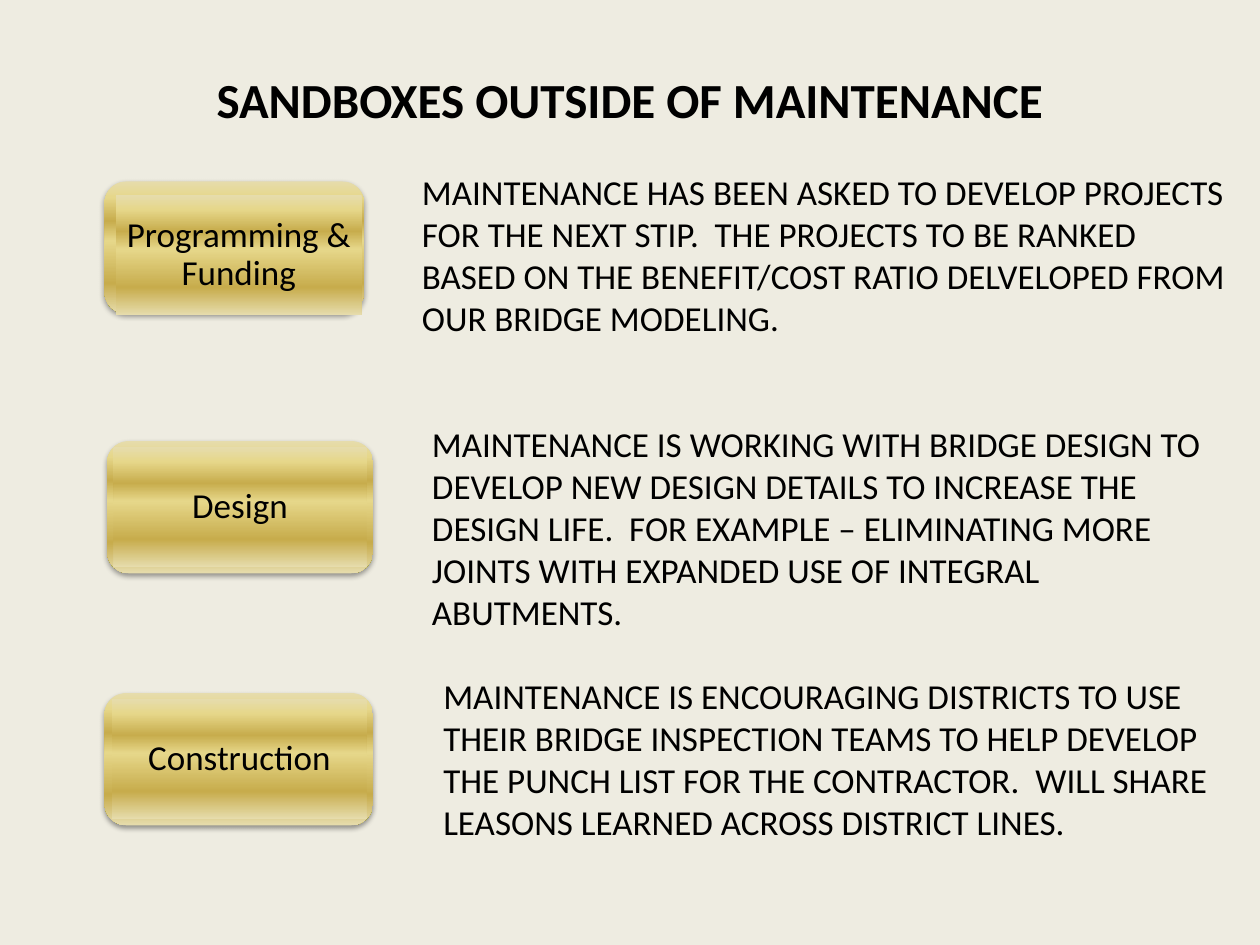
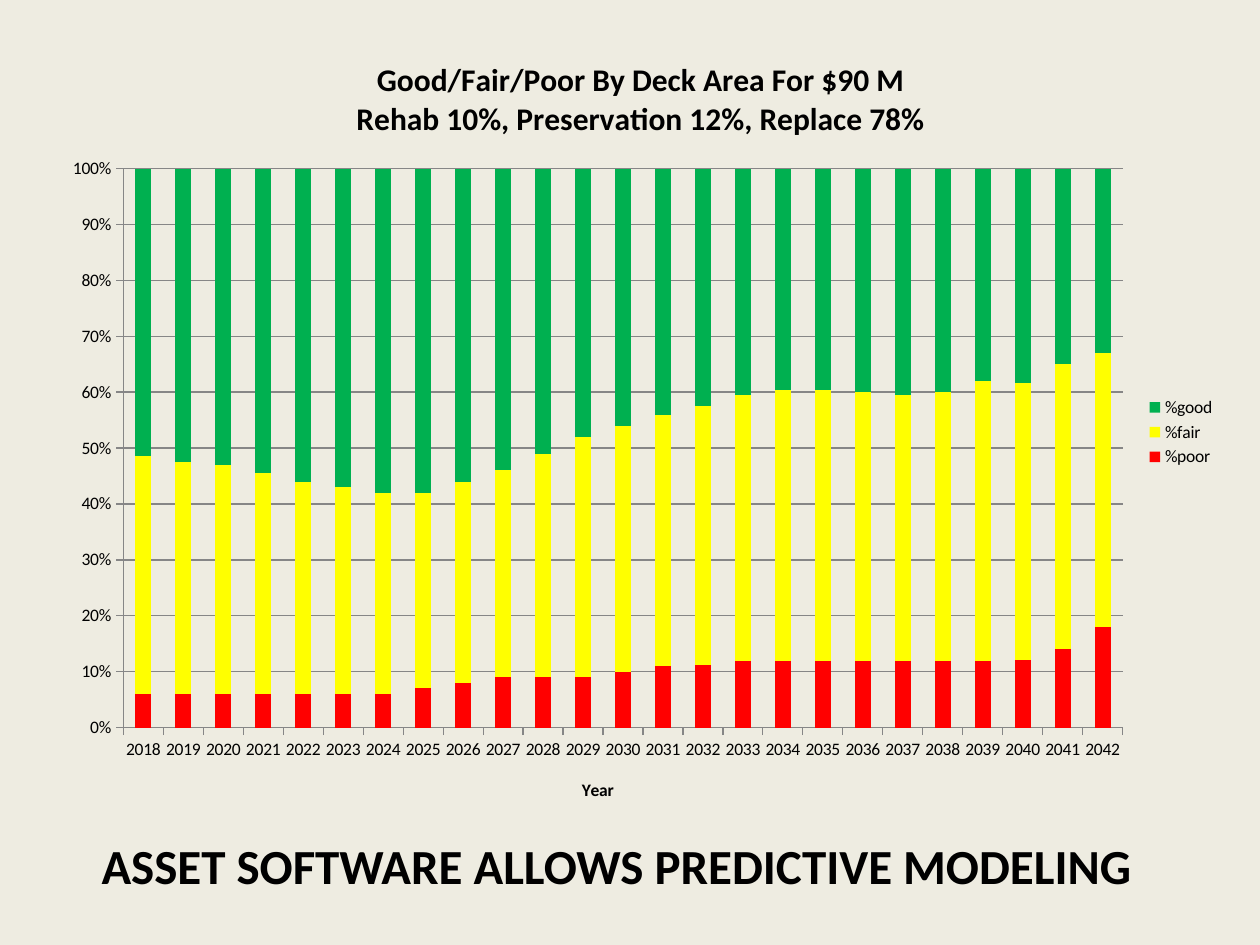
from dataclasses import dataclass

from lxml.etree import SubElement
from pptx import Presentation
from pptx.chart.data import CategoryChartData
from pptx.dml.color import RGBColor
from pptx.enum.chart import XL_CHART_TYPE, XL_LEGEND_POSITION, XL_TICK_MARK
from pptx.enum.shapes import MSO_SHAPE
from pptx.enum.text import MSO_ANCHOR, MSO_AUTO_SIZE, PP_ALIGN
from pptx.oxml import parse_xml
from pptx.oxml.ns import nsdecls, qn
from pptx.util import Inches, Pt


@dataclass(frozen=True)
class Theme:
    font: str = "Calibri"
    ground: str = "EEECE1"
    ink: str = "000000"
    rule: str = "868686"
    poor: str = "FF0000"
    fair: str = "FFFF00"
    good: str = "00B050"
    gold: tuple = ((0, "E6DCAC"), (12, "E6D78A"), (30, "C7AC4C"),
                   (45, "E6D78A"), (77, "C7AC4C"), (100, "E6DCAC"))
    head: int = 28
    body: int = 20
    sub: int = 18
    small: int = 10


THEME = Theme()

# Label, card box, inner box, text box, text
TOPICS = [
    ("Programming & Funding", (0.83, 1.44, 2.06, 1.05), (0.92, 1.55, 1.95, 0.95),
     (3.25, 1.3, 6.58, 1.45),
     "MAINTENANCE HAS BEEN ASKED TO DEVELOP PROJECTS FOR THE NEXT STIP.  "
     "THE PROJECTS TO BE RANKED BASED ON THE BENEFIT/COST RATIO DELVELOPED "
     "FROM OUR BRIDGE MODELING."),
    ("Design", (0.85, 3.5, 2.11, 1.05), (0.9, 3.55, 2.01, 0.95),
     (3.33, 3.3, 6.42, 1.78),
     "MAINTENANCE IS WORKING WITH BRIDGE DESIGN TO DEVELOP NEW DESIGN DETAILS "
     "TO INCREASE THE DESIGN LIFE.  FOR EXAMPLE – ELIMINATING MORE JOINTS "
     "WITH EXPANDED USE OF INTEGRAL ABUTMENTS."),
    ("Construction", (0.83, 5.5, 2.13, 1.05), (0.89, 5.55, 2.02, 0.95),
     (3.42, 5.3, 6.33, 1.45),
     "MAINTENANCE IS ENCOURAGING DISTRICTS TO USE THEIR BRIDGE INSPECTION "
     "TEAMS TO HELP DEVELOP THE PUNCH LIST FOR THE CONTRACTOR.  WILL SHARE "
     "LEASONS LEARNED ACROSS DISTRICT LINES."),
]

YEARS = [str(year) for year in range(2018, 2043)]
SHARES = [
    ("%poor", THEME.poor, [6, 6, 6, 6, 6, 6, 6, 7, 8, 9, 9, 9, 10, 11, 11, 12,
                           12, 12, 12, 12, 12, 12, 12, 14, 18]),
    ("%fair", THEME.fair, [42, 42, 41, 40, 38, 37, 36, 35, 36, 37, 40, 43, 44,
                           45, 46, 48, 49, 49, 48, 48, 48, 50, 49, 51, 49]),
    ("%good", THEME.good, [51, 53, 53, 55, 56, 57, 58, 58, 56, 54, 51, 48, 46,
                           44, 42, 41, 40, 40, 40, 41, 40, 38, 38, 35, 33]),
]


def color(code):
    return RGBColor.from_string(code)


def inches(box):
    return [Inches(size) for size in box]


def style(font, size, bold=False):
    font.name, font.size, font.bold = THEME.font, Pt(size), bold
    font.color.rgb = color(THEME.ink)


def write(frame, text, size=THEME.body, bold=False, align=None,
          spacing=None, after=None):
    """Fill a text frame, one paragraph for each line of text."""
    frame.text = text
    for para in frame.paragraphs:
        para.alignment, para.line_spacing = align, spacing
        para.space_after = after
        for run in para.runs:
            style(run.font, size, bold)


def add_text(slide, box, text, **form):
    frame = slide.shapes.add_textbox(*inches(box)).text_frame
    frame.word_wrap = True
    frame.auto_size = MSO_AUTO_SIZE.SHAPE_TO_FIT_TEXT
    write(frame, text, **form)


def add_title(slide, box, text):
    add_text(slide, box, text, size=THEME.head, bold=True,
             align=PP_ALIGN.CENTER)


def add_gold(group, kind, box):
    """Add a borderless shape with the gold gradient."""
    shape = group.shapes.add_shape(kind, *inches(box))
    shape.shadow.inherit = False
    shape.line.fill.background()
    shape.fill.gradient()
    shape.fill.gradient_angle = 270
    stops = shape.element.spPr.find(".//" + qn("a:gsLst"))
    for stop in list(stops):
        stops.remove(stop)
    for place, code in THEME.gold:
        stop = SubElement(stops, qn("a:gs"), pos=str(place * 1000))
        SubElement(stop, qn("a:srgbClr"), val=code)
    return shape


def cast_shadow(shape):
    effects = shape.element.spPr.find(qn("a:effectLst"))
    shadow = SubElement(effects, qn("a:outerShdw"), blurRad="40000",
                        dist="20000", dir="5400000", rotWithShape="0")
    tint = SubElement(shadow, qn("a:srgbClr"), val=THEME.ink)
    SubElement(tint, qn("a:alpha"), val="38000")


def add_card(slide, label, box, inner):
    group = slide.shapes.add_group_shape()
    cast_shadow(add_gold(group, MSO_SHAPE.ROUNDED_RECTANGLE, box))
    frame = add_gold(group, MSO_SHAPE.RECTANGLE, inner).text_frame
    frame.word_wrap = True
    frame.vertical_anchor = MSO_ANCHOR.MIDDLE
    frame.margin_left = frame.margin_right = Inches(0.08)
    frame.margin_top = frame.margin_bottom = Inches(0.08)
    write(frame, label, align=PP_ALIGN.CENTER, spacing=0.9, after=Pt(7))


def place_plot(chart, **sides):
    """Fix the inner plot area, as fractions of the chart."""
    area = chart.element.find(".//" + qn("c:plotArea"))
    for old in area.findall(qn("c:layout")):
        area.remove(old)
    layout = parse_xml(
        f'<c:layout {nsdecls("c")}><c:manualLayout>'
        '<c:layoutTarget val="inner"/><c:xMode val="edge"/>'
        '<c:yMode val="edge"/></c:manualLayout></c:layout>')
    for side, size in sides.items():
        SubElement(layout[0], qn(f"c:{side}"), val=str(size))
    area.insert(0, layout)


def add_chart(slide, box, title):
    data = CategoryChartData()
    data.categories = YEARS
    for name, _, shares in SHARES:
        data.add_series(name, shares)
    chart = slide.shapes.add_chart(
        XL_CHART_TYPE.COLUMN_STACKED_100, *inches(box), data).chart
    style(chart.font, THEME.small)
    chart.has_title = True
    write(chart.chart_title.text_frame, title, size=THEME.sub, bold=True)

    plot = chart.plots[0]
    plot.vary_by_categories = False
    plot.gap_width, plot.overlap = 150, 100
    for series, (_, code, _) in zip(plot.series, SHARES):
        series.format.fill.solid()
        series.format.fill.fore_color.rgb = color(code)

    years, scale = chart.category_axis, chart.value_axis
    for axis in (years, scale):
        axis.major_tick_mark = XL_TICK_MARK.OUTSIDE
        axis.minor_tick_mark = XL_TICK_MARK.NONE
        axis.format.line.color.rgb = color(THEME.rule)
    write(years.axis_title.text_frame, "Year", size=THEME.small, bold=True)
    scale.has_major_gridlines = True
    scale.major_gridlines.format.line.color.rgb = color(THEME.rule)
    scale.major_unit = 0.1
    scale.tick_labels.number_format = "0%"
    scale.tick_labels.number_format_is_linked = False

    chart.has_legend = True
    chart.legend.position = XL_LEGEND_POSITION.RIGHT
    chart.legend.include_in_layout = False
    place_plot(chart, x=0.06, y=0.17, w=0.85, h=0.7)


def add_slide(deck):
    slide = deck.slides.add_slide(deck.slide_layouts[6])
    fill = slide.background.fill
    fill.solid()
    fill.fore_color.rgb = color(THEME.ground)
    return slide


def main():
    deck = Presentation()
    deck.slide_width, deck.slide_height = Inches(10), Inches(7.5)

    slide = add_slide(deck)
    for label, card, inner, box, text in TOPICS:
        add_card(slide, label, card, inner)
        add_text(slide, box, text)
    add_title(slide, (1.5, 0.5, 7.08, 0.57), "SANDBOXES OUTSIDE OF MAINTENANCE ")

    slide = add_slide(deck)
    add_title(slide, (0.12, 6.58, 9.63, 0.57),
              "ASSET SOFTWARE ALLOWS PREDICTIVE MODELING ")
    add_chart(slide, (0.42, 0.26, 9.33, 6.34),
              "Good/Fair/Poor By Deck Area For $90 M\n"
              "Rehab 10%, Preservation 12%, Replace 78%")

    deck.save("out.pptx")


if __name__ == "__main__":
    main()
